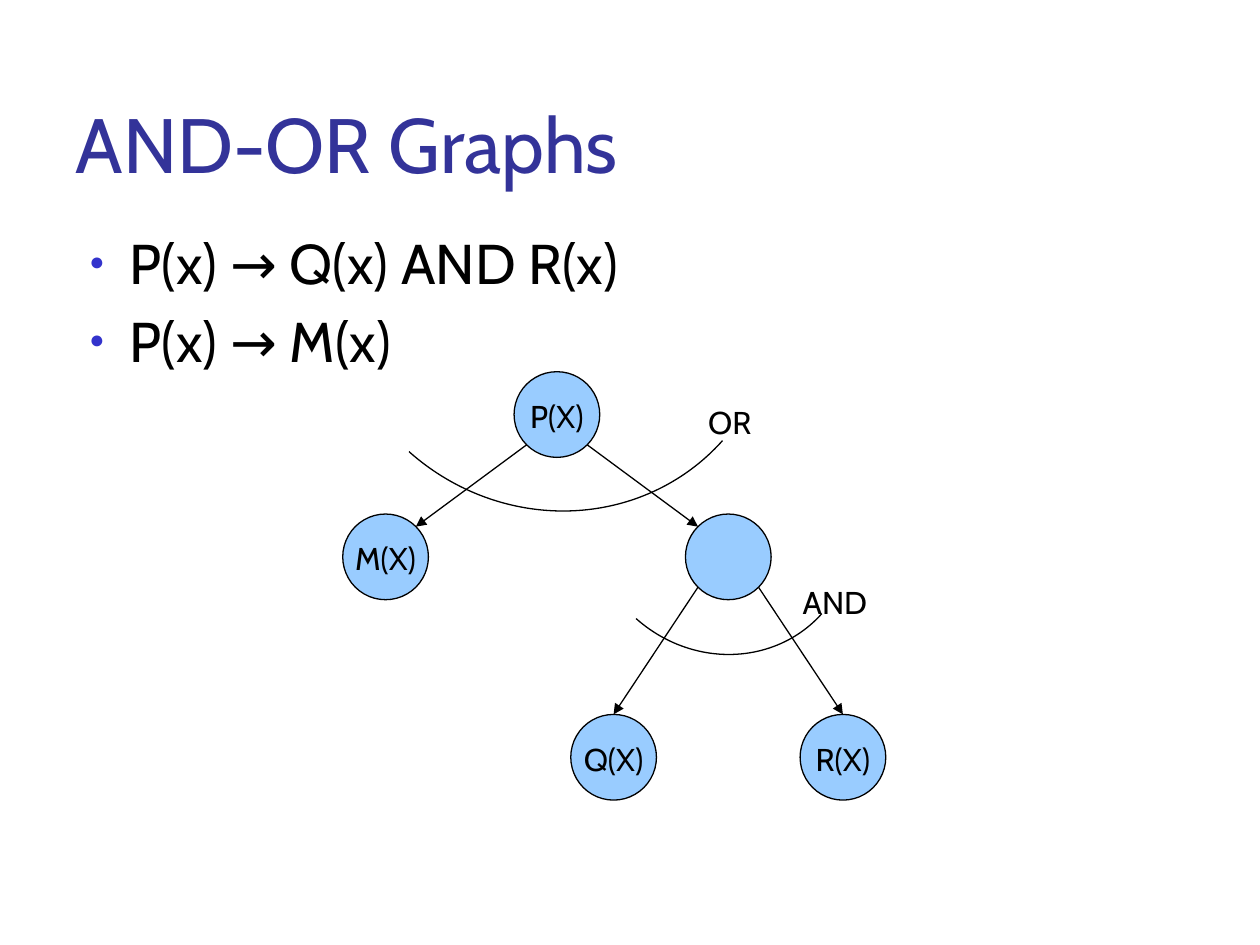
from lxml.etree import SubElement
from pptx import Presentation
from pptx.dml.color import RGBColor
from pptx.enum.shapes import MSO_CONNECTOR, MSO_SHAPE
from pptx.enum.text import MSO_ANCHOR, MSO_AUTO_SIZE, PP_ALIGN
from pptx.oxml.ns import qn
from pptx.util import Inches, Pt

BLACK = "000000"
DIAMETER = 0.68
DIAGONAL = 0.24  # horizontal and vertical reach of a circle's 45° point


def color(value):
    return RGBColor.from_string(value)


def write(frame, lines, size, text_color, align, **frame_format):
    """Fill a text frame with one paragraph per line and format it."""
    for name, value in frame_format.items():
        setattr(frame, name, value)
    frame.text = "\n".join(lines)
    for paragraph in frame.paragraphs:
        paragraph.alignment = align
        font = paragraph.runs[0].font
        font.name = "Cabin"
        font.size = Pt(size)
        font.color.rgb = color(text_color)


presentation = Presentation()
presentation.slide_width = Inches(10)
presentation.slide_height = Inches(7.5)
slide = presentation.slides.add_slide(presentation.slide_layouts[1])
shapes = slide.shapes

# Title and rules
title, body = slide.placeholders
for placeholder, top, height in [(title, 0.3, 1.25), (body, 1.76, 4.95)]:
    placeholder.left, placeholder.top = Inches(0.5), Inches(top)
    placeholder.width, placeholder.height = Inches(9), Inches(height)

write(title.text_frame, ["AND-OR Graphs"], 44, "333399", PP_ALIGN.LEFT,
      vertical_anchor=MSO_ANCHOR.BOTTOM, auto_size=MSO_AUTO_SIZE.NONE)
write(body.text_frame, ["P(x) → Q(x) AND R(x)", "P(x) → M(x)"], 32, BLACK,
      PP_ALIGN.LEFT, auto_size=MSO_AUTO_SIZE.NONE)
for paragraph in body.text_frame.paragraphs:
    properties = paragraph._p.get_or_add_pPr()
    properties.set("marL", str(Inches(0.43)))
    properties.set("indent", str(Inches(-0.32)))
    bullet_color = SubElement(properties, qn("a:buClr"))
    SubElement(bullet_color, qn("a:srgbClr"), val="3333CC")
    SubElement(properties, qn("a:buSzPct"), val="45000")
    SubElement(properties, qn("a:buChar"), char="●")

# Graph nodes: name, centre, label
nodes = {}
for name, x, y, label in [
    ("P", 4.42, 3.29, "P(X)"),
    ("M", 3.06, 4.42, "M(X)"),
    ("both", 5.78, 4.42, ""),
    ("Q", 4.87, 6.01, "Q(X)"),
    ("R", 6.69, 6.01, "R(X)"),
]:
    node = shapes.add_shape(
        MSO_SHAPE.OVAL, Inches(x - DIAMETER / 2), Inches(y - DIAMETER / 2),
        Inches(DIAMETER), Inches(DIAMETER))
    node.shadow.inherit = False
    node.fill.solid()
    node.fill.fore_color.rgb = color("99CCFF")
    node.line.color.rgb = color(BLACK)
    node.line.width = Pt(0.75)
    if label:
        write(node.text_frame, [label], 18, BLACK, PP_ALIGN.CENTER,
              vertical_anchor=MSO_ANCHOR.MIDDLE, word_wrap=False,
              margin_left=Inches(0.09), margin_right=Inches(0.09),
              margin_top=Inches(0.06), margin_bottom=Inches(0.04))
    nodes[name] = (node, x, y)

# Arrows leave a parent diagonally; Q and R are reached at the top
for parent, child, joins_top in [
    ("P", "M", False), ("P", "both", False), ("both", "Q", True), ("both", "R", True),
]:
    _, x1, y1 = nodes[parent]
    child_node, x2, y2 = nodes[child]
    reach = DIAGONAL if x2 > x1 else -DIAGONAL
    arrow = shapes.add_connector(
        MSO_CONNECTOR.STRAIGHT, Inches(x1 + reach), Inches(y1 + DIAGONAL),
        Inches(x2 - reach), Inches(y2 - DIAGONAL))
    if joins_top:
        arrow.end_connect(child_node, 0)
    arrow.line.color.rgb = color(BLACK)
    arrow.line.width = Pt(0.75)
    SubElement(arrow.line._get_or_add_ln(), qn("a:tailEnd"), type="triangle")
    SubElement(arrow._element.spPr, qn("a:effectLst"))

# Arcs across the branches
for left, top, width, height in [(4.71, 3.08, 2.02, 2.15), (2.67, 0.5, 3.44, 3.6)]:
    arc = shapes.add_shape(
        MSO_SHAPE.ARC, Inches(left), Inches(top), Inches(width), Inches(height))
    arc.rotation = 131.7
    arc.shadow.inherit = False
    arc.fill.background()
    arc.line.color.rgb = color(BLACK)
    arc.line.width = Pt(0.75)

for label, left, top in [("OR", 5.53, 3.15), ("AND", 6.28, 4.58)]:
    box = shapes.add_textbox(Inches(left), Inches(top), Inches(0.91), Inches(0.39))
    write(box.text_frame, [label], 18, BLACK, PP_ALIGN.LEFT, word_wrap=True,
          auto_size=MSO_AUTO_SIZE.SHAPE_TO_FIT_TEXT,
          margin_left=Inches(0.09), margin_right=Inches(0.09))

presentation.save("out.pptx")
